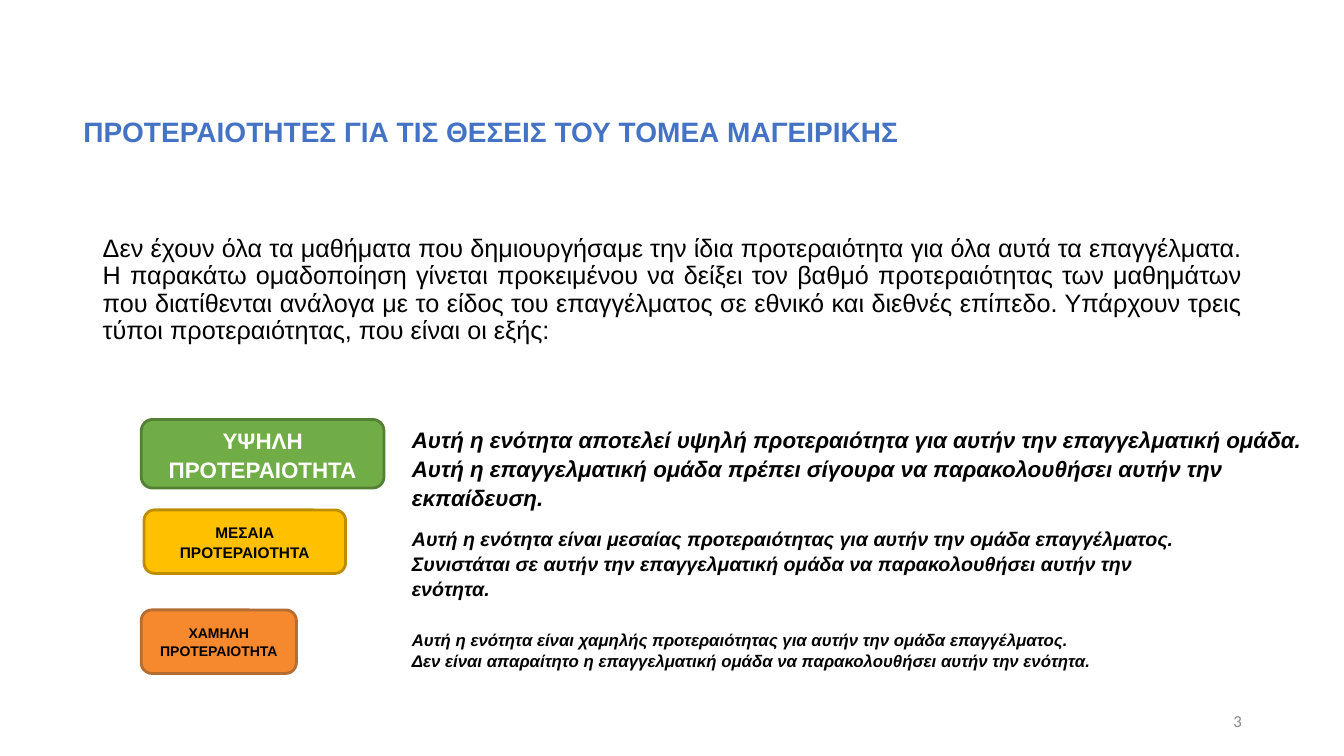
import pptx
import pptx.util
import pptx.dml.color
import pptx.enum.shapes
import pptx.enum.text

Cm = pptx.util.Cm
Pt = pptx.util.Pt
ALIGN = pptx.enum.text.PP_ALIGN
ANCHOR = pptx.enum.text.MSO_ANCHOR

PRIORITIES = [
    {
        "label": "ΥΨΗΛΗ ΠΡΟΤΕΡΑΙΟΤΗΤΑ",
        "label_box": (0, 0, 6.12, 1.73),
        "fill": "70AD47", "line": "538035", "color": "FFFFFF", "label_size": 16,
        "meaning": [
            "Αυτή η ενότητα αποτελεί υψηλή προτεραιότητα για αυτήν την επαγγελματική ομάδα.",
            "Αυτή η επαγγελματική ομάδα πρέπει σίγουρα να παρακολουθήσει αυτήν την εκπαίδευση.",
        ],
        "meaning_box": (6.57, 0, 23.57, 2.46), "meaning_size": 16,
    },
    {
        "label": "ΜΕΣΑΙΑ ΠΡΟΤΕΡΑΙΟΤΗΤΑ",
        "label_box": (0.07, 2.28, 5.08, 1.6),
        "fill": "FFC000", "line": "BD8E00", "color": "000000", "label_size": 11,
        "meaning": [
            "Αυτή η ενότητα είναι μεσαίας προτεραιότητας για αυτήν την ομάδα επαγγέλματος. "
            "Συνιστάται σε αυτήν την επαγγελματική ομάδα να παρακολουθήσει αυτήν την ενότητα.",
        ],
        "meaning_box": (6.57, 2.54, 20.22, 2.18), "meaning_size": 14,
    },
    {
        "label": "ΧΑΜΗΛΗ ΠΡΟΤΕΡΑΙΟΤΗΤΑ",
        "label_box": (0, 4.8, 3.91, 1.6),
        "fill": "F6882E", "line": "B46D33", "color": "000000", "label_size": 10,
        "meaning": [
            "Αυτή η ενότητα είναι χαμηλής προτεραιότητας για αυτήν την ομάδα επαγγέλματος.",
            "Δεν είναι απαραίτητο η επαγγελματική ομάδα να παρακολουθήσει αυτήν την ενότητα.",
        ],
        "meaning_box": (6.57, 5.13, 22.25, 1.35), "meaning_size": 12,
    },
]


def rgb(hex_color):
    return pptx.dml.color.RGBColor.from_string(hex_color)


def set_all(target, values):
    for name, value in values.items():
        setattr(target, name, value)


def write(frame, lines, color, font, paragraph_format, frame_format=None):
    set_all(frame, {"word_wrap": True, **(frame_format or {})})
    for index, line in enumerate(lines):
        paragraph = frame.paragraphs[0] if index == 0 else frame.add_paragraph()
        set_all(paragraph, paragraph_format)
        run = paragraph.add_run()
        run.text = line
        set_all(run.font, {"name": "Arial", **font})
        run.font.color.rgb = rgb(color)


def add_text(slide, box, *text):
    write(slide.shapes.add_textbox(*map(Cm, box)).text_frame, *text)


def add_title(slide, box):
    add_text(slide, box, ["ΠΡΟΤΕΡΑΙΟΤΗΤΕΣ ΓΙΑ ΤΙΣ ΘΕΣΕΙΣ ΤΟΥ ΤΟΜΕΑ ΜΑΓΕΙΡΙΚΗΣ"], "4472C4",
             {"size": Pt(20), "bold": True}, {"line_spacing": 0.9},
             {"vertical_anchor": ANCHOR.MIDDLE, "margin_bottom": Cm(1)})


def add_introduction(slide, box):
    add_text(slide, box, [
        "Δεν έχουν όλα τα μαθήματα που δημιουργήσαμε την ίδια προτεραιότητα για όλα αυτά τα "
        "επαγγέλματα. Η παρακάτω ομαδοποίηση γίνεται προκειμένου να δείξει τον βαθμό "
        "προτεραιότητας των μαθημάτων που διατίθενται ανάλογα με το είδος του επαγγέλματος σε "
        "εθνικό και διεθνές επίπεδο. Υπάρχουν τρεις τύποι προτεραιότητας, που είναι οι εξής:",
    ], "000000", {"size": Pt(18)}, {"alignment": ALIGN.JUSTIFY, "line_spacing": 0.9})


def add_priorities(slide, left, top):
    def placed(box):
        x, y, width, height = box
        return left + x, top + y, width, height

    for priority in PRIORITIES:
        label = slide.shapes.add_shape(pptx.enum.shapes.MSO_SHAPE.ROUNDED_RECTANGLE,
                                       *map(Cm, placed(priority["label_box"])))
        label.shadow.inherit = False
        label.fill.solid()
        label.fill.fore_color.rgb = rgb(priority["fill"])
        label.line.color.rgb = rgb(priority["line"])
        label.line.width = Pt(2)
        write(label.text_frame, [priority["label"]], priority["color"],
              {"size": Pt(priority["label_size"]), "bold": True},
              {"alignment": ALIGN.CENTER, "line_spacing": 1.07},
              {"vertical_anchor": ANCHOR.MIDDLE})
        add_text(slide, placed(priority["meaning_box"]), priority["meaning"], "000000",
                 {"size": Pt(priority["meaning_size"]), "bold": True, "italic": True},
                 {"line_spacing": 1.07})


def add_page_number(slide, box):
    add_text(slide, box, ["3"], "888888", {"name": "Calibri", "size": Pt(12)},
             {"alignment": ALIGN.RIGHT}, {"vertical_anchor": ANCHOR.MIDDLE})


def main():
    deck = pptx.Presentation()
    set_all(deck, {"slide_width": Cm(33.87), "slide_height": Cm(19.05)})
    slide = deck.slides.add_slide(deck.slide_layouts[6])
    add_title(slide, (1.85, 1.83, 30.15, 3.96))
    add_introduction(slide, (2.34, 5.82, 29.21, 3.96))
    add_priorities(slide, 3.56, 10.57)
    add_page_number(slide, (23.93, 17.65, 7.62, 1.02))
    deck.save("out.pptx")


if __name__ == "__main__":
    main()
